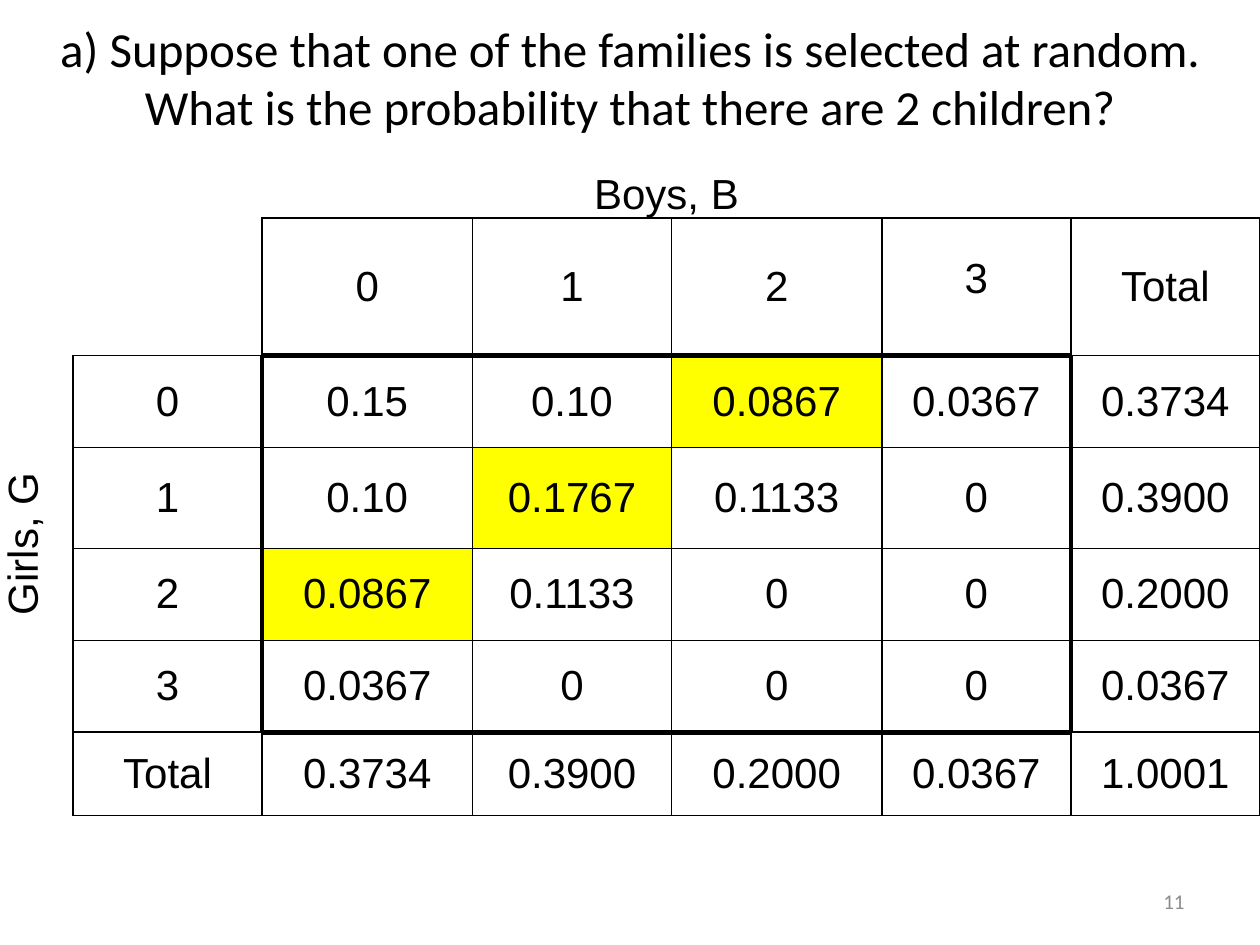
from lxml.etree import SubElement
from pptx import Presentation
from pptx.dml.color import RGBColor
from pptx.enum.text import MSO_ANCHOR as ANCHOR, MSO_AUTO_SIZE as AUTO, PP_ALIGN as ALIGN
from pptx.oxml.ns import qn
from pptx.util import Inches, Pt

BLACK = RGBColor(0, 0, 0)
GREY = RGBColor(0x8C, 0x8C, 0x8C)
YELLOW = RGBColor(0xFF, 0xFF, 0)
TITLE = ("a) Suppose that one of the families is selected at random. "
         "What is the probability that there are 2 children?")
COLS = [0.58, 1.5, 1.67, 1.58, 1.67, 1.5, 1.5]
ROWS = [0.36, 1.09, 0.73, 0.8, 0.73, 0.73, 0.66]
CELLS = [
    ["", "", "Boys, B", "", "", "", ""],
    ["", "", "0", "1", "2", "3", "Total"],
    ["Girls, G", "0", "0.15", "0.10", "0.0867", "0.0367", "0.3734"],
    ["", "1", "0.10", "0.1767", "0.1133", "0", "0.3900"],
    ["", "2", "0.0867", "0.1133", "0", "0", "0.2000"],
    ["", "3", "0.0367", "0", "0", "0", "0.0367"],
    ["", "Total", "0.3734", "0.3900", "0.2000", "0.0367", "1.0001"],
]
TWO_CHILDREN = [(2, 4), (3, 3), (4, 2)]
SIDES = {"a:lnL": (0, -1), "a:lnR": (0, 1), "a:lnT": (-1, 0), "a:lnB": (1, 0)}


def write(tf, text, size=24, font="Arial", color=BLACK, align=ALIGN.CENTER):
    """Put one formatted run of text in a text frame."""
    p = tf.paragraphs[0]
    p.alignment = align
    r = p.add_run()
    r.text = text
    r.font.size, r.font.name = Pt(size), font
    r.font.color.rgb = color


def in_grid(row, col):
    """Tell whether a cell belongs to the ruled part of the table."""
    return 1 <= row < len(ROWS) and 1 <= col < len(COLS) and (row, col) != (1, 1)


def in_joint(row, col):
    """Tell whether a cell holds a joint probability."""
    return 2 <= row <= 5 and 2 <= col <= 5


def edge_width(a, b):
    """Give the line width between two neighbouring cells in points."""
    if in_joint(*a) != in_joint(*b):
        return 3
    return 1 if in_grid(*a) or in_grid(*b) else 0


def set_borders(cell, row, col):
    """Rule the four sides of a cell."""
    tc_pr = cell._tc.get_or_add_tcPr()
    for i, (tag, (dr, dc)) in enumerate(SIDES.items()):
        width = edge_width((row, col), (row + dr, col + dc))
        ln = SubElement(tc_pr, qn(tag), w=str(Pt(width)))
        if width:
            fill = SubElement(ln, qn("a:solidFill"))
            SubElement(fill, qn("a:srgbClr"), val=str(BLACK))
        else:
            SubElement(ln, qn("a:noFill"))
        tc_pr.insert(i, ln)


def format_cell(cell, row, col):
    """Fill, rule and write one cell."""
    cell.margin_left = cell.margin_right = Inches(0.07)
    cell.margin_top = cell.margin_bottom = 0
    cell.vertical_anchor = ANCHOR.MIDDLE if row else ANCHOR.TOP
    if (row, col) in TWO_CHILDREN:
        cell.fill.solid()
        cell.fill.fore_color.rgb = YELLOW
    else:
        cell.fill.background()
    set_borders(cell, row, col)
    if CELLS[row][col]:
        write(cell.text_frame, CELLS[row][col])


def add_joint_table(s):
    """Add the table of joint and marginal probabilities."""
    frame = s.shapes.add_table(len(ROWS), len(COLS), 0, Inches(1.36),
                               Inches(sum(COLS)), Inches(sum(ROWS)))
    table = frame.table
    table.first_row = table.horz_banding = False
    for column, width in zip(table.columns, COLS):
        column.width = Inches(width)
    for line, height in zip(table.rows, ROWS):
        line.height = Inches(height)
    for row in range(len(ROWS)):
        for col in range(len(COLS)):
            format_cell(table.cell(row, col), row, col)
    table.cell(0, 2).merge(table.cell(0, 5))
    girls = table.cell(2, 0)
    girls.merge(table.cell(5, 0))
    girls._tc.get_or_add_tcPr().set("vert", "vert270")
    three = table.cell(1, 5)
    three.vertical_anchor = ANCHOR.BOTTOM
    three.margin_bottom = Inches(0.42)


def add_title(s):
    """Place and write the slide title."""
    sp = s.shapes.title
    sp.left, sp.top, sp.width, sp.height = 0, Inches(0.3), Inches(10), Inches(0.62)
    tf = sp.text_frame
    tf.auto_size = AUTO.NONE
    tf.vertical_anchor = ANCHOR.MIDDLE
    write(tf, TITLE, size=28, font="Calibri")


def add_number(s):
    """Add the slide number."""
    sp = s.shapes.add_textbox(Inches(7.17), Inches(6.95), Inches(2.33), Inches(0.4))
    tf = sp.text_frame
    tf.word_wrap = True
    tf.vertical_anchor = ANCHOR.MIDDLE
    write(tf, "11", size=12, font="Calibri", color=GREY, align=ALIGN.RIGHT)


def main():
    """Build and save the slide."""
    prs = Presentation()
    prs.slide_width, prs.slide_height = Inches(10), Inches(7.5)
    s = prs.slides.add_slide(prs.slide_layouts[5])
    add_title(s)
    add_joint_table(s)
    add_number(s)
    prs.save("out.pptx")


if __name__ == "__main__":
    main()
